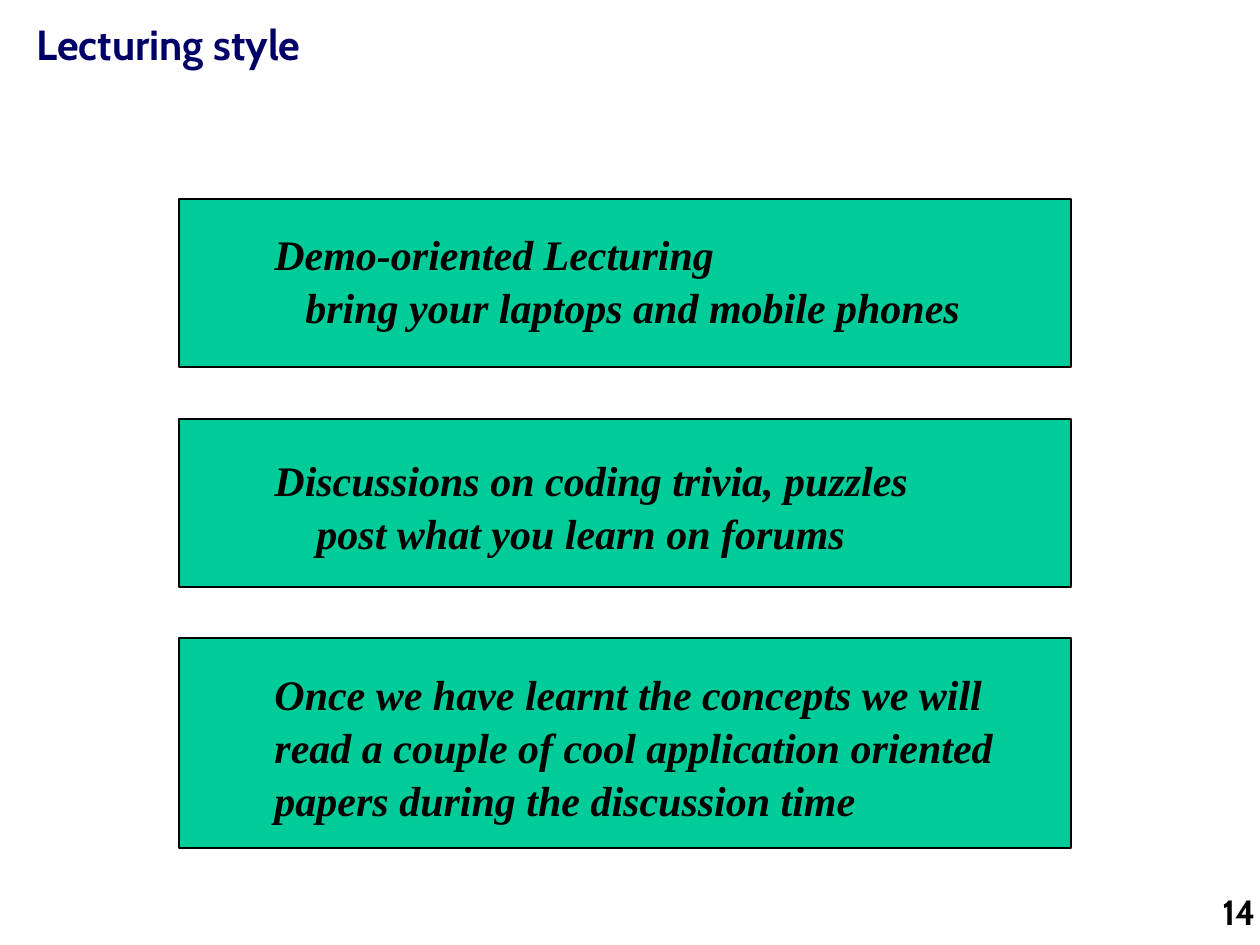
from dataclasses import dataclass

from pptx import Presentation
from pptx import util as u
from pptx.dml.color import RGBColor
from pptx.enum import shapes, text

PX = u.Inches(1) / 126


@dataclass(frozen=True)
class Theme:
    navy: RGBColor = RGBColor(0x00, 0x00, 0x66)
    black: RGBColor = RGBColor(0x00, 0x00, 0x00)
    green: RGBColor = RGBColor(0x00, 0xCC, 0x99)
    heading_font: str = "Cabin"
    body_font: str = "Times New Roman"
    large: int = 24
    small: int = 20
    line_spacing: float = 1.05
    outline: float = 0.75


@dataclass(frozen=True)
class Box:
    left: int
    top: int
    width: int
    height: int

    def emu(self) -> list[u.Emu]:
        return [px(n) for n in (self.left, self.top, self.width, self.height)]


@dataclass(frozen=True)
class Line:
    words: str
    indent: int = 0


@dataclass(frozen=True)
class Card:
    panel: Box
    label: Box
    lines: tuple[Line, ...]
    wrap: bool = True


THEME = Theme()

CARDS = (
    Card(Box(179, 199, 892, 168), Box(262, 220, 732, 115),
         (Line("Demo-oriented Lecturing"),
          Line("bring your laptops and mobile phones", 31)), wrap=False),
    Card(Box(179, 419, 892, 168), Box(262, 446, 775, 115),
         (Line("Discussions on coding trivia, puzzles"),
          Line("post what you learn on forums", 42))),
    Card(Box(179, 638, 892, 210), Box(262, 660, 775, 165),
         (Line("Once we have learnt the concepts we will read a couple of cool "
               "application oriented papers during the discussion time"),)),
)


def px(length: int) -> u.Emu:
    return u.Emu(round(length * PX))


def add_text(slide, box: Box, lines: tuple[Line, ...], font: str, size: int,
             color: RGBColor, italic: bool = False, wrap: bool = True,
             align: text.PP_ALIGN = text.PP_ALIGN.LEFT) -> None:
    frame = slide.shapes.add_textbox(*box.emu()).text_frame
    frame.word_wrap = wrap
    for index, line in enumerate(lines):
        paragraph = frame.add_paragraph() if index else frame.paragraphs[0]
        paragraph.text = line.words
        paragraph.alignment = align
        paragraph.line_spacing = THEME.line_spacing
        if line.indent:
            paragraph._p.get_or_add_pPr().set("marL", str(px(line.indent)))
        paragraph.font.name = font
        paragraph.font.size = u.Pt(size)
        paragraph.font.bold = True
        paragraph.font.italic = italic
        paragraph.font.color.rgb = color


def add_card(slide, card: Card) -> None:
    shape = slide.shapes.add_shape(shapes.MSO_SHAPE.RECTANGLE, *card.panel.emu())
    shape.shadow.inherit = False
    shape.fill.solid()
    shape.fill.fore_color.rgb = THEME.green
    shape.line.color.rgb = THEME.black
    shape.line.width = u.Pt(THEME.outline)
    add_text(slide, card.label, card.lines, THEME.body_font, THEME.large,
             THEME.black, italic=True, wrap=card.wrap)


def main() -> None:
    presentation = Presentation()
    presentation.slide_width, presentation.slide_height = px(1260), px(945)
    slide = presentation.slides.add_slide(presentation.slide_layouts[6])
    add_text(slide, Box(24, 10, 1223, 126), (Line("Lecturing style"),),
             THEME.heading_font, THEME.large, THEME.navy)
    for card in CARDS:
        add_card(slide, card)
    add_text(slide, Box(869, 882, 399, 63), (Line("14"),), THEME.heading_font,
             THEME.small, THEME.black, align=text.PP_ALIGN.RIGHT)
    presentation.save("out.pptx")


if __name__ == "__main__":
    main()
